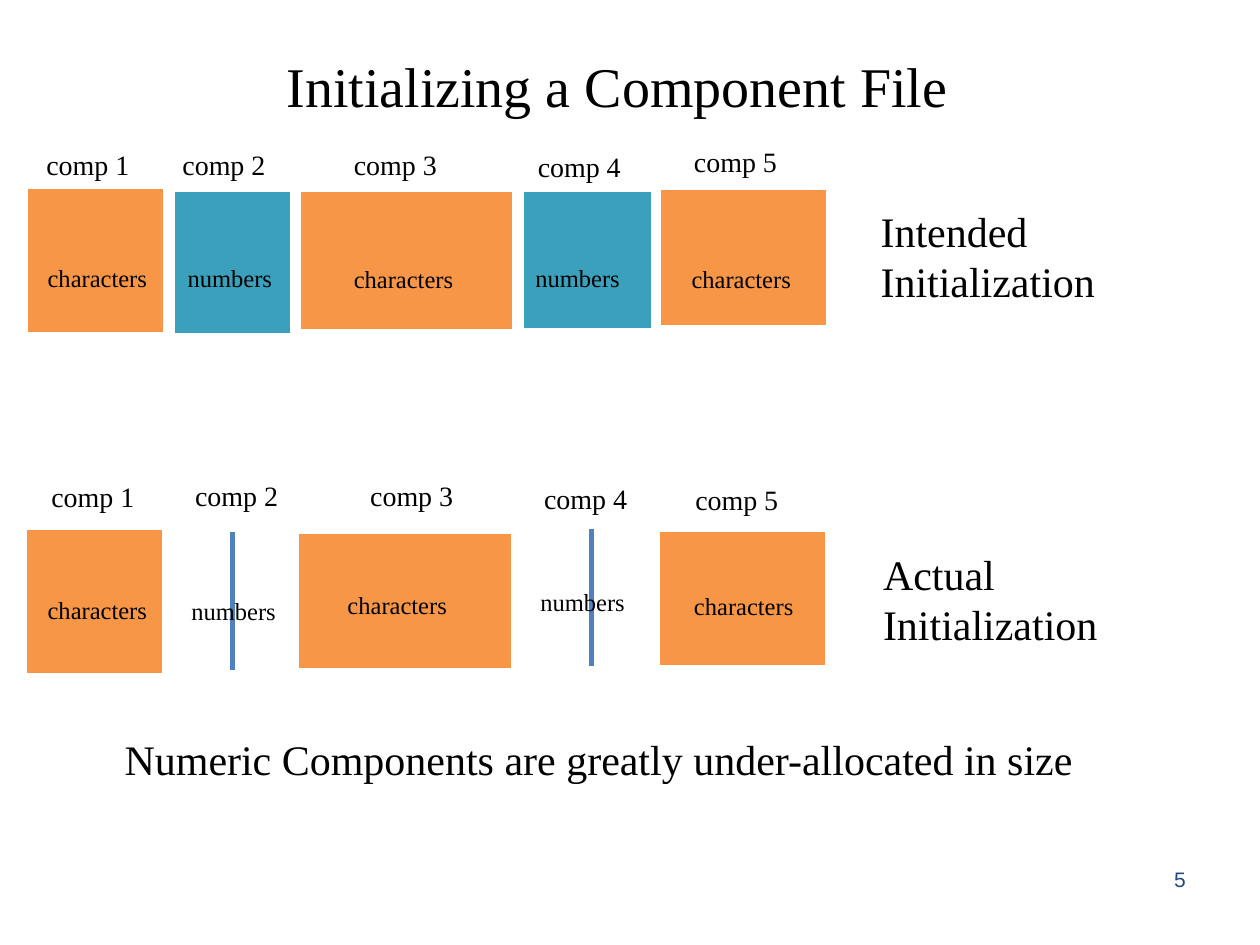
from typing import NamedTuple, Optional

from lxml.etree import SubElement
from pptx import Presentation
from pptx.dml.color import RGBColor
from pptx.enum.shapes import MSO_SHAPE
from pptx.enum.text import MSO_ANCHOR, MSO_AUTO_SIZE, PP_ALIGN
from pptx.oxml.ns import qn
from pptx.util import Inches, Pt

SERIF = "Times New Roman"
BLACK = RGBColor(0x00, 0x00, 0x00)
WHITE = RGBColor(0xFF, 0xFF, 0xFF)
ORANGE = RGBColor(0xF7, 0x96, 0x46)
TEAL = RGBColor(0x3B, 0xA0, 0xBB)
BLUE = RGBColor(0x4F, 0x81, 0xBD)
NAVY = RGBColor(0x1F, 0x49, 0x7D)

BAR_WIDTH, BAR_HEIGHT = 0.07, 1.12
BORDERS = {"a:lnL": 1, "a:lnR": 1, "a:lnT": 1, "a:lnB": 3}


class Spot(NamedTuple):
    left: float
    top: float


class Area(NamedTuple):
    left: float
    top: float
    width: float
    height: float


class Component(NamedTuple):
    """A file component; without a block it is drawn as a thin bar."""
    label: Spot
    content: str
    content_spot: Spot
    block: Optional[Area] = None
    bar: Optional[Spot] = None


INTENDED = [
    Component(Spot(0.27, 1.12), "characters", Spot(0.28, 2.04), Area(0.22, 1.49, 1.08, 1.16)),
    Component(Spot(1.35, 1.12), "numbers", Spot(1.39, 2.04), Area(1.38, 1.52, 0.93, 1.14)),
    Component(Spot(2.71, 1.12), "characters", Spot(2.71, 2.05), Area(2.38, 1.52, 1.69, 1.11)),
    Component(Spot(4.17, 1.14), "numbers", Spot(4.15, 2.04), Area(4.15, 1.52, 1.02, 1.10)),
    Component(Spot(5.41, 1.10), "characters", Spot(5.39, 2.05), Area(5.24, 1.50, 1.32, 1.10)),
]
ACTUAL = [
    Component(Spot(0.31, 3.76), "characters", Spot(0.28, 4.67), Area(0.21, 4.20, 1.08, 1.16)),
    Component(Spot(1.45, 3.75), "numbers", Spot(1.42, 4.68), bar=Spot(1.81, 4.21)),
    Component(Spot(2.84, 3.75), "characters", Spot(2.66, 4.63), Area(2.37, 4.23, 1.69, 1.09)),
    Component(Spot(4.22, 3.77), "numbers", Spot(4.19, 4.61), bar=Spot(4.66, 4.18)),
    Component(Spot(5.42, 3.78), "characters", Spot(5.41, 4.64), Area(5.23, 4.22, 1.32, 1.08)),
]
CONTENT_WIDTHS = {"characters": 1.0, "numbers": 0.97}
CONTENT_FILLS = {"characters": ORANGE, "numbers": TEAL}


def add_text(page, text: str, area: Area, size: int, wrap: bool = True,
             font: str = SERIF, color: RGBColor = BLACK) -> None:
    box = page.shapes.add_textbox(*map(Inches, area))
    frame = box.text_frame
    frame.word_wrap = wrap
    frame.auto_size = MSO_AUTO_SIZE.SHAPE_TO_FIT_TEXT
    frame.text = text
    for para in frame.paragraphs:
        para.font.name, para.font.size = font, Pt(size)
        para.font.color.rgb = color


def add_bar(page, spot: Spot) -> None:
    bar = page.shapes.add_shape(MSO_SHAPE.RECTANGLE,
                                *map(Inches, (*spot, BAR_WIDTH, BAR_HEIGHT)))
    bar.shadow.inherit = False
    bar.fill.solid()
    bar.fill.fore_color.rgb = BLUE
    bar.line.color.rgb = WHITE
    bar.line.width = Pt(2.25)


def add_block(page, area: Area, color: RGBColor) -> None:
    table = page.shapes.add_table(1, 1, *map(Inches, area)).table
    table.first_row = table.horz_banding = False
    cell = table.cell(0, 0)
    # Borders come before the fill in the cell properties
    properties = cell._tc.get_or_add_tcPr()
    for tag, points in BORDERS.items():
        border = SubElement(properties, qn(tag), w=str(Pt(points)))
        fill = SubElement(border, qn("a:solidFill"))
        SubElement(fill, qn("a:srgbClr"), val=str(WHITE))
    cell.fill.solid()
    cell.fill.fore_color.rgb = color


def add_components(page, components: list[Component]) -> None:
    for number, component in enumerate(components, start=1):
        content = component.content
        if component.block:
            add_block(page, component.block, CONTENT_FILLS[content])
        else:
            add_bar(page, component.bar)
        add_text(page, f"comp {number}", Area(*component.label, 0.87, 0.37), 16, wrap=False)
        add_text(page, content,
                 Area(*component.content_spot, CONTENT_WIDTHS[content], 0.34), 14)


def main() -> None:
    deck = Presentation()
    deck.slide_width, deck.slide_height = Inches(10), Inches(7.5)
    page = deck.slides.add_slide(deck.slide_layouts[5])

    # Title
    title = page.shapes.title
    title.left, title.top, title.width, title.height = map(Inches, (0.49, 0.25, 8.82, 0.85))
    title.text_frame.text = "Initializing a Component File"
    title.text_frame.vertical_anchor = MSO_ANCHOR.MIDDLE
    heading = title.text_frame.paragraphs[0]
    heading.alignment = PP_ALIGN.CENTER
    heading.font.name, heading.font.size = SERIF, Pt(32)
    heading.font.color.rgb = BLACK

    # The two file layouts with their captions
    add_components(page, INTENDED)
    add_text(page, "Intended\nInitialization", Area(6.89, 1.58, 1.98, 0.91), 24)
    add_components(page, ACTUAL)
    add_text(page, "Actual\nInitialization", Area(6.91, 4.3, 2.08, 0.91), 24)

    # Conclusion and page number
    add_text(page, "Numeric Components are greatly under-allocated in size",
             Area(0.89, 5.77, 7.97, 0.5), 24)
    add_text(page, "5", Area(9.22, 6.83, 0.3, 0.3), 12, wrap=False, font="Arial", color=NAVY)

    deck.save("out.pptx")


if __name__ == "__main__":
    main()
